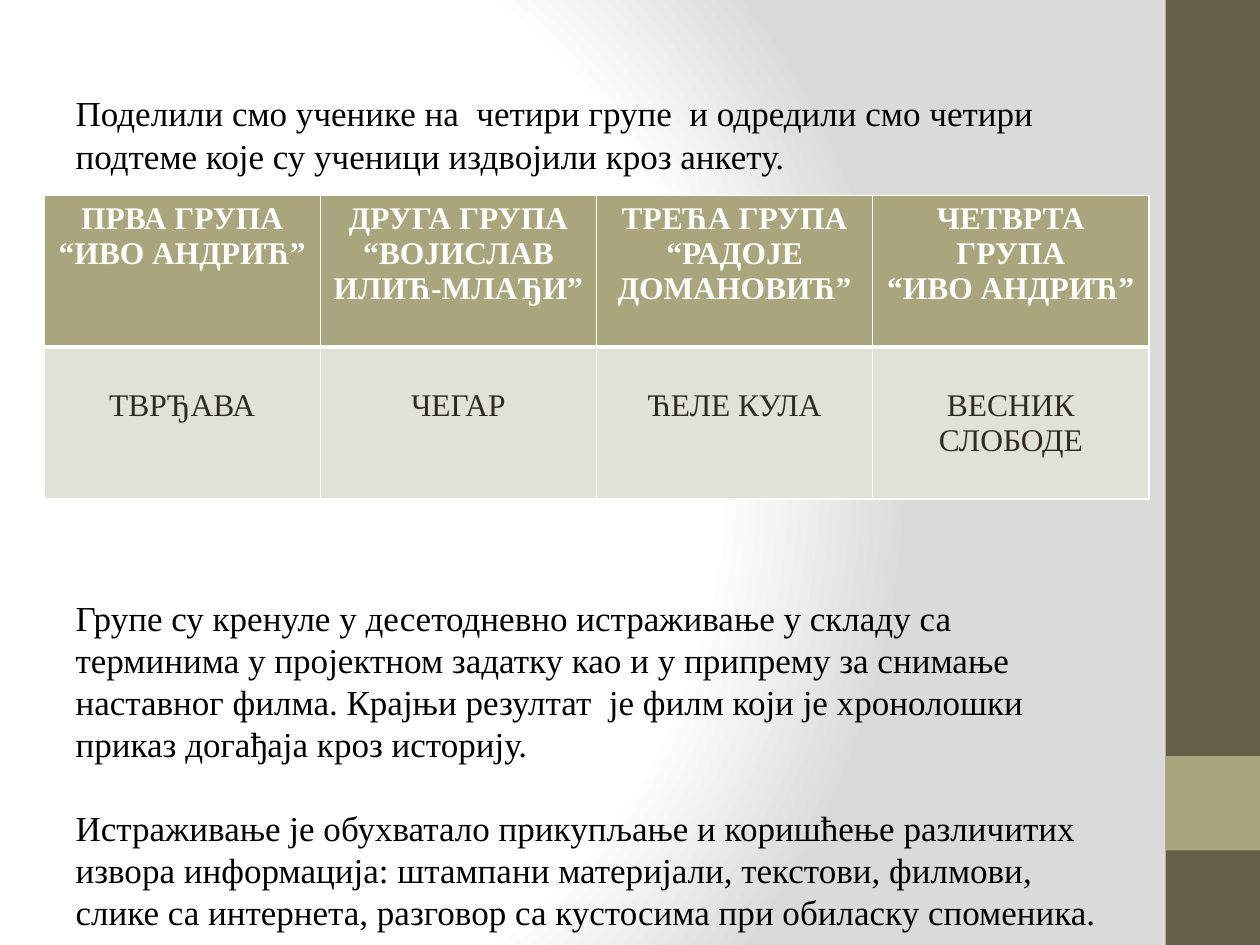
from lxml import etree
from pptx import Presentation
from pptx.dml.color import RGBColor
from pptx.enum.shapes import MSO_SHAPE
from pptx.enum.text import MSO_ANCHOR, MSO_AUTO_SIZE, PP_ALIGN
from pptx.oxml import parse_xml
from pptx.oxml.ns import nsdecls, qn
from pptx.util import Inches, Pt

RECTANGLE = MSO_SHAPE.RECTANGLE
TOP = MSO_ANCHOR.TOP
NO_AUTOFIT = MSO_AUTO_SIZE.NONE
CENTER = PP_ALIGN.CENTER
LEFT = PP_ALIGN.LEFT

WIDTH, HEIGHT = Inches(10), Inches(7.5)
FONT = "Times New Roman"
COLORS = {
    "white": "FFFFFF",
    "gray": "DADADA",
    "brown": "675E47",
    "olive": "A9A57C",
    "pale": "E2E1D7",
    "dark": "2F2B20",
    "black": "000000",
}
PARAGRAPHS = [
    ("Поделили смо ученике на  четири групе  и одредили смо четири подтеме "
     "које су ученици издвојили кроз анкету.", 0),
    ("Групе су кренуле у десетодневно истраживање у складу са терминима у "
     "пројектном задатку као и у припрему за снимање наставног филма. Крајњи "
     "резултат  је филм који је хронолошки приказ догађаја кроз историју.", 240),
    ("Истраживање је обухватало прикупљање и коришћење различитих извора "
     "информација: штампани материјали, текстови, филмови, слике са интернета, "
     "разговор са кустосима при обиласку споменика.", 24),
]
GROUPS = [
    ("ПРВА ГРУПА\n“ИВО АНДРИЋ”", "ТВРЂАВА"),
    ("ДРУГА ГРУПА\n“ВОЈИСЛАВ ИЛИЋ-МЛАЂИ”", "ЧЕГАР"),
    ("ТРЕЋА ГРУПА\n“РАДОЈЕ ДОМАНОВИЋ”", "ЋЕЛЕ КУЛА"),
    ("ЧЕТВРТА ГРУПА\n“ИВО АНДРИЋ”", "ВЕСНИК СЛОБОДЕ"),
]


def rgb(name):
    return RGBColor.from_string(COLORS[name])


def format_runs(paragraph, size, color, bold=False):
    for run in paragraph.runs:
        run.font.name = FONT
        run.font.size = Pt(size)
        run.font.bold = bold
        run.font.color.rgb = rgb(color)


def set_background(slide):
    stops = "".join(
        f'<a:gs pos="{share * 1000}"><a:srgbClr val="{COLORS[name]}"/></a:gs>'
        for share, name in [(0, "white"), (75, "white"), (100, "gray")]
    )
    background = parse_xml(
        f'<p:bg {nsdecls("p", "a")}><p:bgPr><a:gradFill rotWithShape="1">'
        f'<a:gsLst>{stops}</a:gsLst><a:path path="circle">'
        '<a:fillToRect l="20000" t="50000" r="100000" b="50000"/></a:path>'
        '</a:gradFill><a:effectLst/></p:bgPr></p:bg>'
    )
    slide.shapes.element.addprevious(background)


def add_sidebar(slide, left, top, width, height):
    for color, start, share in [("brown", 0, 1), ("olive", 0.8, 0.1)]:
        shape = slide.shapes.add_shape(
            RECTANGLE, left, top + int(height * start), width, int(height * share)
        )
        shape.shadow.inherit = False
        shape.fill.solid()
        shape.fill.fore_color.rgb = rgb(color)
        shape.line.fill.background()


def place_body(body, left, top, width, height):
    body.left, body.top, body.width, body.height = left, top, width, height
    text_frame = body.text_frame
    text_frame.word_wrap = True
    text_frame.auto_size = NO_AUTOFIT
    text_frame.vertical_anchor = TOP
    text_frame.text = "\n".join(text for text, _ in PARAGRAPHS)
    for paragraph, (_, space) in zip(text_frame.paragraphs, PARAGRAPHS):
        paragraph.alignment = LEFT
        paragraph.line_spacing = Pt(24)
        paragraph.space_before = Pt(space)
        properties = paragraph._p.get_or_add_pPr()
        properties.set("marL", "0")
        properties.set("indent", "0")
        etree.SubElement(properties, qn("a:buNone"))
        format_runs(paragraph, 20, "black")


def set_borders(cell, widths):
    properties = cell._tc.get_or_add_tcPr()
    for index, (side, width) in enumerate(widths.items()):
        line = parse_xml(
            f'<a:ln{side} {nsdecls("a")} w="{Pt(width)}"><a:solidFill>'
            f'<a:srgbClr val="{COLORS["white"]}"/></a:solidFill></a:ln{side}>'
        )
        properties.insert(index, line)


def add_group_table(slide, left, top, width, height):
    table = slide.shapes.add_table(2, len(GROUPS), left, top, width, height).table
    row_styles = [("olive", "white", True, 0.05, 3), ("pale", "dark", False, 0.33, 1)]
    for column, texts in enumerate(GROUPS):
        for row, (fill, color, bold, margin, bottom) in enumerate(row_styles):
            cell = table.cell(row, column)
            cell.fill.solid()
            cell.fill.fore_color.rgb = rgb(fill)
            cell.margin_top = Inches(margin)
            cell.text_frame.text = texts[row]
            for paragraph in cell.text_frame.paragraphs:
                paragraph.alignment = CENTER
                format_runs(paragraph, 18, color, bold)
            top_width = 1 if row == 0 else row_styles[row - 1][-1]
            set_borders(cell, {"L": 1, "R": 1, "T": top_width, "B": bottom})


def main():
    presentation = Presentation()
    presentation.slide_width, presentation.slide_height = WIDTH, HEIGHT
    slide = presentation.slides.add_slide(presentation.slide_layouts[1])
    title = slide.shapes.title.element
    title.getparent().remove(title)
    set_background(slide)
    place_body(slide.placeholders[1],
               Inches(0.5), Inches(0.68), Inches(8.33), Inches(6.32))
    add_sidebar(slide, Inches(9.25), 0, Inches(0.75), HEIGHT)
    add_group_table(slide, Inches(0.35), Inches(1.55), Inches(8.77), Inches(2.41))
    presentation.save("out.pptx")


if __name__ == "__main__":
    main()
